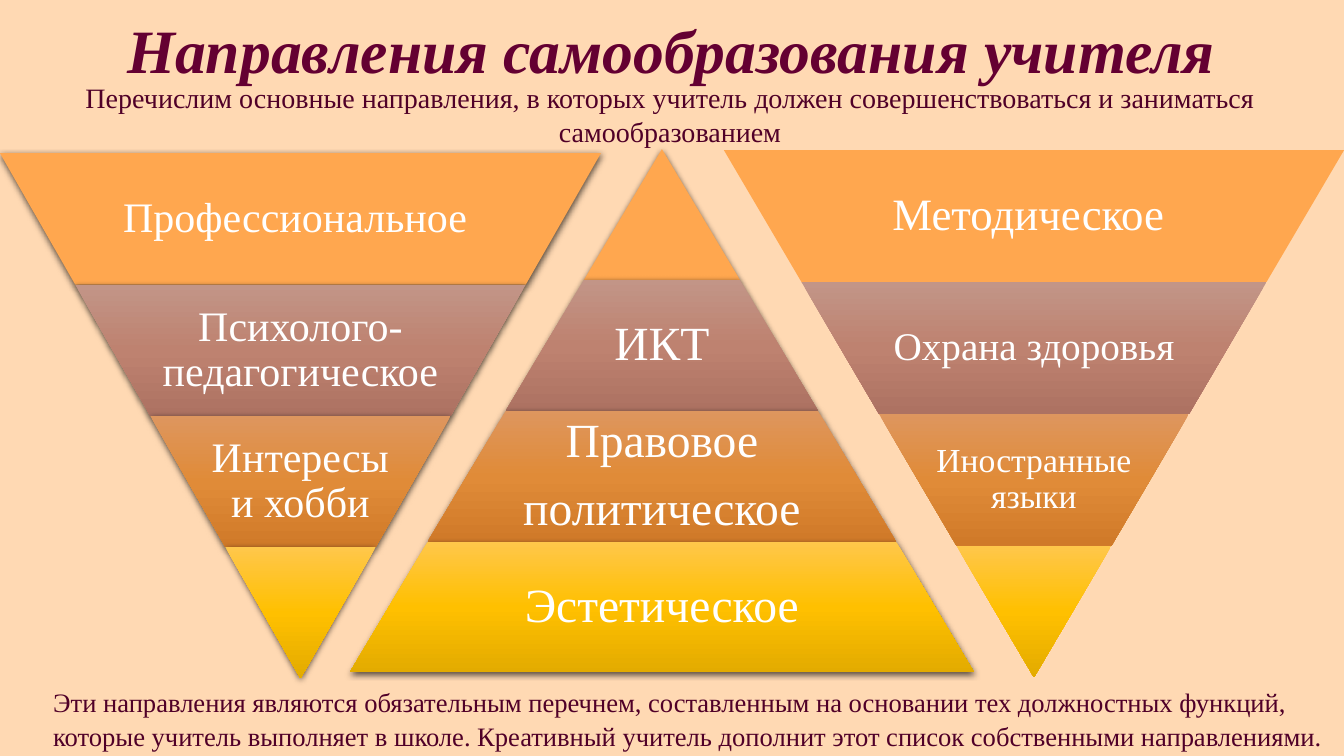
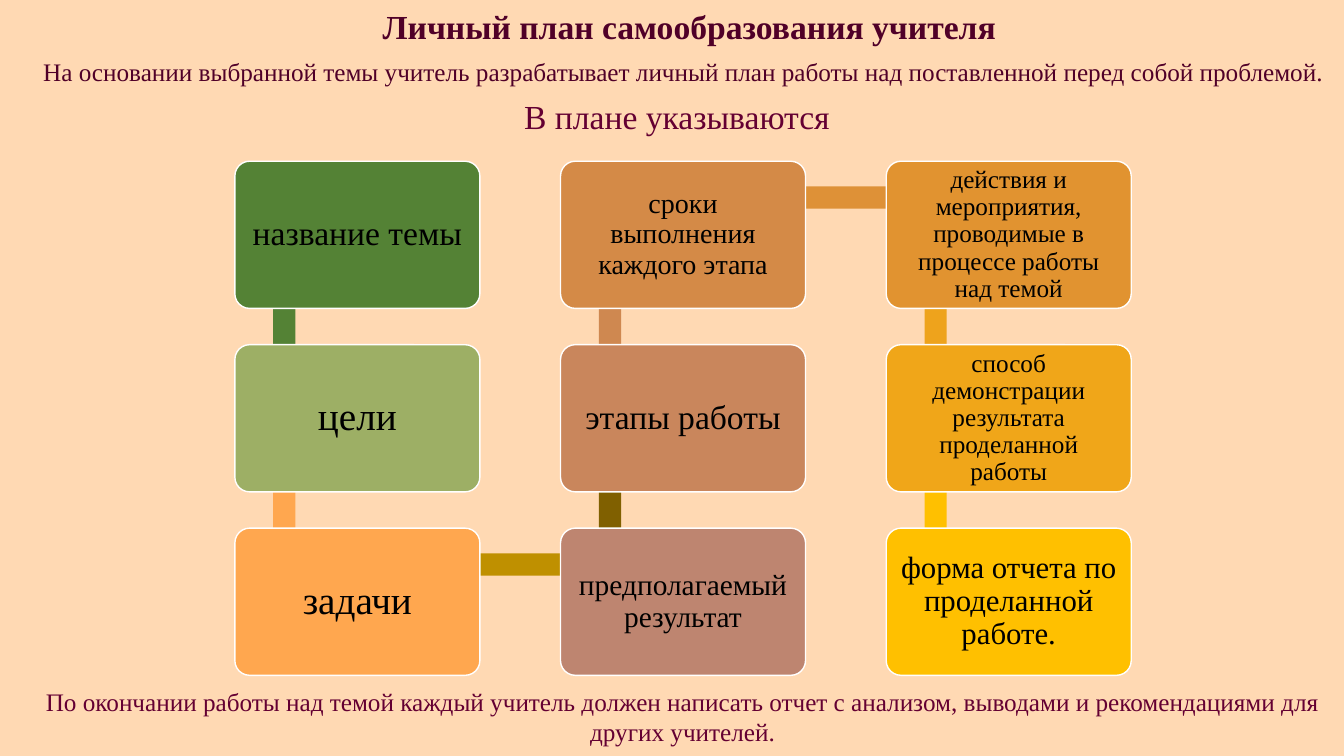
import dataclasses

import pptx
import pptx.dml.color
import pptx.enum.shapes
import pptx.enum.text
import pptx.oxml
import pptx.oxml.ns
import pptx.util

Inches = pptx.util.Inches
Pt = pptx.util.Pt
RGB = pptx.dml.color.RGBColor.from_string
SHAPE = pptx.enum.shapes.MSO_SHAPE
ALIGN = pptx.enum.text.PP_ALIGN
ANCHOR = pptx.enum.text.MSO_ANCHOR
NS = pptx.oxml.ns.nsdecls("a")


@dataclasses.dataclass(frozen=True)
class Theme:
    font: str = "Times New Roman"
    back: str = "FFD9B3"
    plum: str = "640032"
    dark: str = "500028"
    deep: str = "36001B"
    white: str = "FFFFFF"
    black: str = "000000"
    orange: str = "FFA74F"
    gold: str = "FFC000"
    # Bands of a triangle, top to bottom: one colour or gradient stops
    bands: tuple = (
        ("FFA74F",),
        ("C29587", "BE8270", "AD7262"),
        ("DE965E", "E08B38", "D07A29"),
        ("FFC74B", "FFC000", "E3AB00"),
    )
    title: int = 44
    heading: int = 24
    lead: int = 20
    closing: int = 19
    note: int = 18


T = Theme()


# Text
def write(sp, text, size, color=T.dark, bold=False, italic=False, outline=None,
          align=ALIGN.CENTER, anchor=ANCHOR.TOP, spacing=1.0, after=0, margins=(0.1, 0.05)):
    tf = sp.text_frame
    tf.word_wrap = True
    tf.vertical_anchor = anchor
    tf.margin_left = tf.margin_right = Inches(margins[0])
    tf.margin_top = tf.margin_bottom = Inches(margins[1])
    for i, line in enumerate(text.split("\n")):
        p = tf.add_paragraph() if i else tf.paragraphs[0]
        p.alignment = align
        p.line_spacing = spacing
        p.space_after = Pt(after)
        r = p.add_run()
        r.text = line
        r.font.name = T.font
        r.font.size = Pt(size)
        r.font.bold = bold
        r.font.italic = italic
        r.font.color.rgb = RGB(color)
        if outline:
            r.font._element.insert(0, pptx.oxml.parse_xml(
                f'<a:ln {NS} w="9525"><a:solidFill><a:srgbClr val="{outline}"/>'
                '</a:solidFill></a:ln>'))


def add_text(s, box, text, size, **fmt):
    sp = s.shapes.add_textbox(*map(Inches, box))
    write(sp, text, size, **fmt)


# Shapes
def add_block(s, kind, box, color=None, line=None):
    sp = s.shapes.add_shape(kind, *map(Inches, box))
    sp.shadow.inherit = False
    if color:
        sp.fill.solid()
        sp.fill.fore_color.rgb = RGB(color)
    if line:
        sp.line.color.rgb = RGB(line)
        sp.line.width = Pt(1)
    else:
        sp.line.fill.background()
    return sp


def fill_gradient(sp, colors):
    stops = "".join(f'<a:gs pos="{i * 50000}"><a:srgbClr val="{c}"/></a:gs>'
                    for i, c in enumerate(colors))
    sp._element.spPr.find(pptx.oxml.ns.qn("a:prstGeom")).addnext(pptx.oxml.parse_xml(
        f'<a:gradFill {NS} rotWithShape="0"><a:gsLst>{stops}</a:gsLst>'
        '<a:lin ang="5400000" scaled="0"/></a:gradFill>'))


def cast_shadow(sp):
    effects = sp._element.spPr.find(pptx.oxml.ns.qn("a:effectLst"))
    effects.append(pptx.oxml.parse_xml(
        f'<a:outerShdw {NS} blurRad="57150" dist="19050" dir="5400000" algn="ctr" '
        'rotWithShape="0"><a:srgbClr val="000000"><a:alpha val="63000"/>'
        '</a:srgbClr></a:outerShdw>'))


def add_triangle(s, left, top, width, height, labels, inverted=True, shadow=True):
    """Triangle cut into equal bands; labels are (text, size) pairs or None."""
    count = len(T.bands)
    band_h = height / count
    for i, (colors, label) in enumerate(zip(T.bands, labels)):
        band_w = width * (count - i if inverted else i + 1) / count
        x, y = left + (width - band_w) / 2, top + i * band_h
        sp = add_block(s, SHAPE.TRAPEZOID, (x, y, band_w, band_h),
                       colors[0] if len(colors) == 1 else None)
        sp.adjustments[0] = width / (2 * height)
        sp.rotation = 180 if inverted else 0
        if len(colors) > 1:
            fill_gradient(sp, colors)
        if shadow:
            cast_shadow(sp)
        if label:
            text, size = label
            text_w = band_w * 0.65
            add_text(s, (left + (width - text_w) / 2, y, text_w, band_h), text, size,
                     color=T.white, anchor=ANCHOR.MIDDLE, spacing=0.9, after=12,
                     margins=(0.02, 0.04))


def add_snake(s, steps):
    """Boxes run down, up and down three columns, joined by bars."""
    rows, box_w, box_h, bar = 3, 2.43, 1.46, 0.22
    left, top, step_x, step_y = 2.33, 1.6, 3.23, 1.82

    def place(i):
        col, row = divmod(i, rows)
        if col % 2:
            row = rows - 1 - row
        return left + col * step_x, top + row * step_y

    for i, (text, size, color, bar_color) in enumerate(steps):
        x, y = place(i)
        if bar_color:
            next_x, next_y = place(i + 1)
            if next_x == x:
                box = (x + 0.38, min(y, next_y) + 0.36, bar, step_y)
            else:
                box = (x + 0.5, y + 0.25, step_x, bar)
            add_block(s, SHAPE.RECTANGLE, box, bar_color)
        sp = add_block(s, SHAPE.ROUNDED_RECTANGLE, (x, y, box_w, box_h), color, T.white)
        sp.adjustments[0] = 0.1
        margin = size / 240
        write(sp, text, size, color=T.black, anchor=ANCHOR.MIDDLE, spacing=0.9,
              margins=(margin, margin))


def add_slide(prs):
    s = prs.slides.add_slide(prs.slide_layouts[6])
    s.background.fill.solid()
    s.background.fill.fore_color.rgb = RGB(T.back)
    return s


# Slides
def build_directions(prs):
    s = add_slide(prs)
    add_text(s, (0.91, 0.15, 11.5, 0.76), "Направления самообразования учителя", T.title,
             color=T.plum, bold=True, italic=True, outline=T.dark,
             anchor=ANCHOR.MIDDLE, spacing=0.9)
    add_text(s, (0.25, 0.75, 12.79, 0.77),
             "Перечислим основные направления, в которых учитель должен "
             "совершенствоваться и заниматься самообразованием", T.lead, outline=T.dark)
    add_triangle(s, 3.47, 1.48, 6.19, 5.19,
                 (None, ("ИКТ", 34), ("Правовое\nполитическое", 34), ("Эстетическое", 34)),
                 inverted=False)
    add_triangle(s, 0, 1.52, 5.96, 5.21,
                 (("Профессиональное ", 30), ("Психолого-педагогическое", 30),
                  ("Интересы и хобби", 30), None))
    add_triangle(s, 7.18, 1.49, 6.15, 5.23,
                 (("Методическое ", 32), ("Охрана здоровья", 28),
                  ("Иностранные языки", 24), None), shadow=False)
    add_text(s, (0.43, 6.73, 12.9, 0.77),
             "Эти направления являются обязательным перечнем, составленным на основании тех "
             "должностных функций, которые учитель выполняет в школе. Креативный учитель "
             "дополнит этот список собственными направлениями.",
             T.closing, outline=T.dark, align=ALIGN.LEFT, spacing=1.07)


def build_plan(prs):
    s = add_slide(prs)
    add_text(s, (3.09, 0.01, 7.49, 0.5), "Личный план самообразования учителя", T.heading,
             bold=True, outline=T.deep)
    add_text(s, (0.33, 0.51, 13, 0.4),
             "На основании выбранной темы учитель разрабатывает личный план работы над "
             "поставленной перед собой проблемой.", T.note, outline=T.deep, align=ALIGN.LEFT)
    add_text(s, (5.1, 0.95, 3.35, 0.51), "В плане указываются", T.heading,
             color=T.plum, outline=T.plum, align=ALIGN.LEFT, spacing=0.9)
    # Text, size, box colour, colour of the bar to the next box
    add_snake(s, (
        ("название темы", 24, "548235", "548235"),
        ("цели", 28, "9DAF65", T.orange),
        ("задачи", 28, T.orange, "BF9000"),
        ("предполагаемый результат", 21, "BE8570", "806000"),
        ("этапы работы", 24, "C9865C", "CF8850"),
        ("сроки выполнения каждого этапа", 20, "D48A47", "DE9137"),
        ("действия и мероприятия, проводимые в процессе работы над темой", 18,
         "E19330", "EEA31C"),
        ("способ демонстрации результата проделанной работы", 18, "F0A619", T.gold),
        ("форма отчета по проделанной работе.", 22, T.gold, None),
    ))
    add_text(s, (0.21, 6.76, 13.12, 0.71),
             "По окончании работы над темой каждый учитель должен написать отчет с анализом, "
             "выводами и рекомендациями для других учителей.", T.note,
             color=T.plum, outline=T.plum)


def main():
    prs = pptx.Presentation()
    prs.slide_width, prs.slide_height = Inches(13.33), Inches(7.5)
    build_directions(prs)
    build_plan(prs)
    prs.save("out.pptx")


if __name__ == "__main__":
    main()
